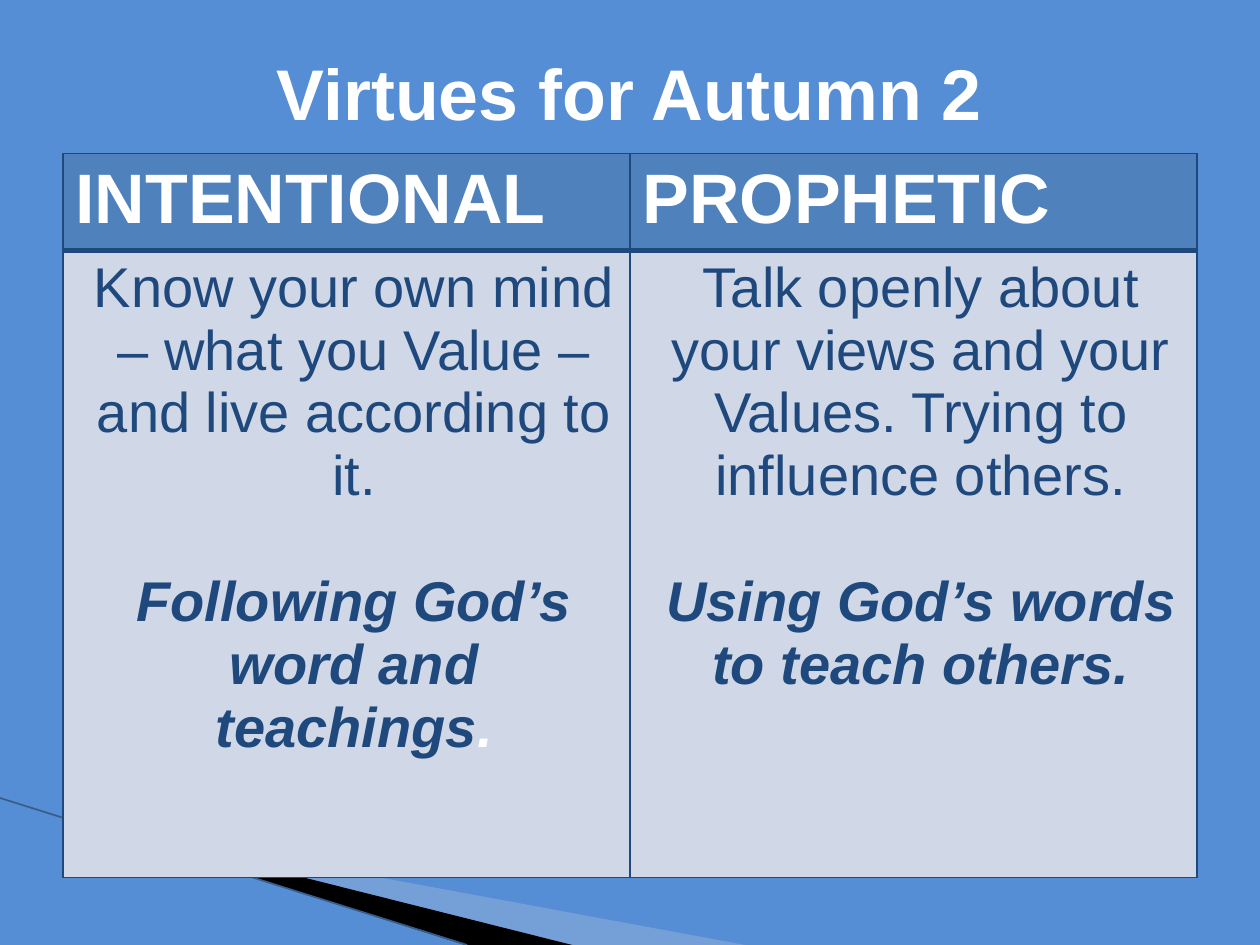
import pptx
import pptx.util
import pptx.dml.color
import pptx.enum.shapes
import pptx.enum.text
import pptx.oxml.ns
from lxml import etree

Pt = pptx.util.Pt
ALIGN = pptx.enum.text.PP_ALIGN
ANCHOR = pptx.enum.text.MSO_ANCHOR
FONT = "Arial"
COLOURS = {
    "background": "558ED5",
    "white": "FFFFFF",
    "navy": "1F497D",
    "header": "4F81BD",
    "body": "D0D8E8",
    "pale": "A7B9DB",
    "black": "000000",
    "edge": "385D8A",
}
VIRTUES = [
    ("INTENTIONAL",
     "Know your own mind – what you Value – and live according to it.",
     [("Following God’s word and teachings", "navy"), (".", "white")]),
    ("PROPHETIC",
     "Talk openly about your views and your Values. Trying to influence others.",
     [("Using God’s words to teach others.", "navy")]),
]


def rgb(name):
    return pptx.dml.color.RGBColor.from_string(COLOURS[name])


def sub(parent, tag, **attributes):
    return etree.SubElement(parent, pptx.oxml.ns.qn(tag), **attributes)


def style(font, size, colour, bold=False, italic=False):
    font.name, font.size = FONT, Pt(size)
    font.bold, font.italic = bold, italic
    font.color.rgb = rgb(colour)


def add_wedge(slide, left, top, points, colour, alpha=None):
    corners = [(Pt(left + x), Pt(top + y)) for x, y in points]
    builder = slide.shapes.build_freeform(*corners[0], scale=1.0)
    builder.add_line_segments(corners[1:], close=True)
    wedge = builder.convert_to_shape()
    wedge.shadow.inherit = False
    wedge.line.fill.background()
    wedge.fill.solid()
    wedge.fill.fore_color.rgb = rgb(colour)
    if alpha is not None:
        for value in wedge.fill._xPr.iter(pptx.oxml.ns.qn("a:srgbClr")):
            sub(value, "a:alpha", val=str(alpha * 1000))


def add_swoosh(slide, left, top, width, height):
    bottom = top + height
    # Wedges fanning out towards the bottom edge
    add_wedge(slide, left + 40, top + 12,
              [(0, 0.7), (388.5, 72.5), (288.5, 72.5), (0, 0)], "pale", 40)
    add_wedge(slide, left + 38.5, top + 11.5,
              [(0, 0), (290.5, 73), (229, 73), (0.5, 0.5)], "black")
    # Thin edge line
    edge = slide.shapes.add_connector(
        pptx.enum.shapes.MSO_CONNECTOR.STRAIGHT,
        Pt(left), Pt(top), Pt(left + width), Pt(bottom))
    edge.line.color.rgb = rgb("edge")
    edge.line.width = Pt(0.95)
    sub(edge._element.spPr, "a:effectLst")


def add_title(slide, left, top, width, height):
    title = slide.shapes.add_textbox(Pt(left), Pt(top), Pt(width), Pt(height))
    frame = title.text_frame
    frame.word_wrap = True
    frame.vertical_anchor = ANCHOR.MIDDLE
    heading = frame.paragraphs[0]
    heading.text = "Virtues for Autumn 2"
    heading.alignment = ALIGN.CENTER
    style(heading.font, 41, "white", bold=True)


def format_cell(cell, fill, top=1, bottom=1):
    properties = cell._tc.get_or_add_tcPr()
    sides = {"a:lnL": 1, "a:lnR": 1, "a:lnT": top, "a:lnB": bottom}
    for tag, width in sides.items():
        line = sub(properties, tag, w=str(Pt(width)))
        sub(sub(line, "a:solidFill"), "a:srgbClr", val=COLOURS["navy"])
    cell.fill.solid()
    cell.fill.fore_color.rgb = rgb(fill)


def add_virtues(slide, left, top, width, height, header_height=52):
    table = slide.shapes.add_table(
        2, len(VIRTUES), Pt(left), Pt(top), Pt(width), Pt(height)).table
    table.rows[0].height = Pt(header_height)
    table.rows[1].height = Pt(height - header_height)
    for column, (virtue, meaning, teaching) in enumerate(VIRTUES):
        # Header cell
        header = table.cell(0, column)
        format_cell(header, "header", bottom=3)
        name = header.text_frame.paragraphs[0]
        name.text = virtue
        style(name.font, 40, "white", bold=True)

        # Meaning, then the teaching in bold italics
        body = table.cell(1, column)
        format_cell(body, "body", top=3)
        explanation = body.text_frame.paragraphs[0]
        explanation.text = meaning
        style(explanation.font, 32, "navy")
        lesson = body.text_frame.add_paragraph()
        lesson.space_before = Pt(36)
        for text, colour in teaching:
            run = lesson.add_run()
            run.text = text
            style(run.font, 32, colour, bold=True, italic=True)
        for paragraph in (explanation, lesson):
            paragraph.alignment = ALIGN.CENTER
            paragraph._p.get_or_add_pPr().set("marL", str(Pt(8.64)))


def main():
    deck = pptx.Presentation()
    deck.slide_width, deck.slide_height = Pt(720), Pt(540)
    slide = deck.slides.add_slide(deck.slide_layouts[6])
    slide.background.fill.solid()
    slide.background.fill.fore_color.rgb = rgb("background")
    add_swoosh(slide, 0, 456, 267, 84)
    add_title(slide, 36, 21.6, 648, 61.2)
    add_virtues(slide, 36, 87.8, 648, 410.4)
    deck.save("out.pptx")


if __name__ == "__main__":
    main()
